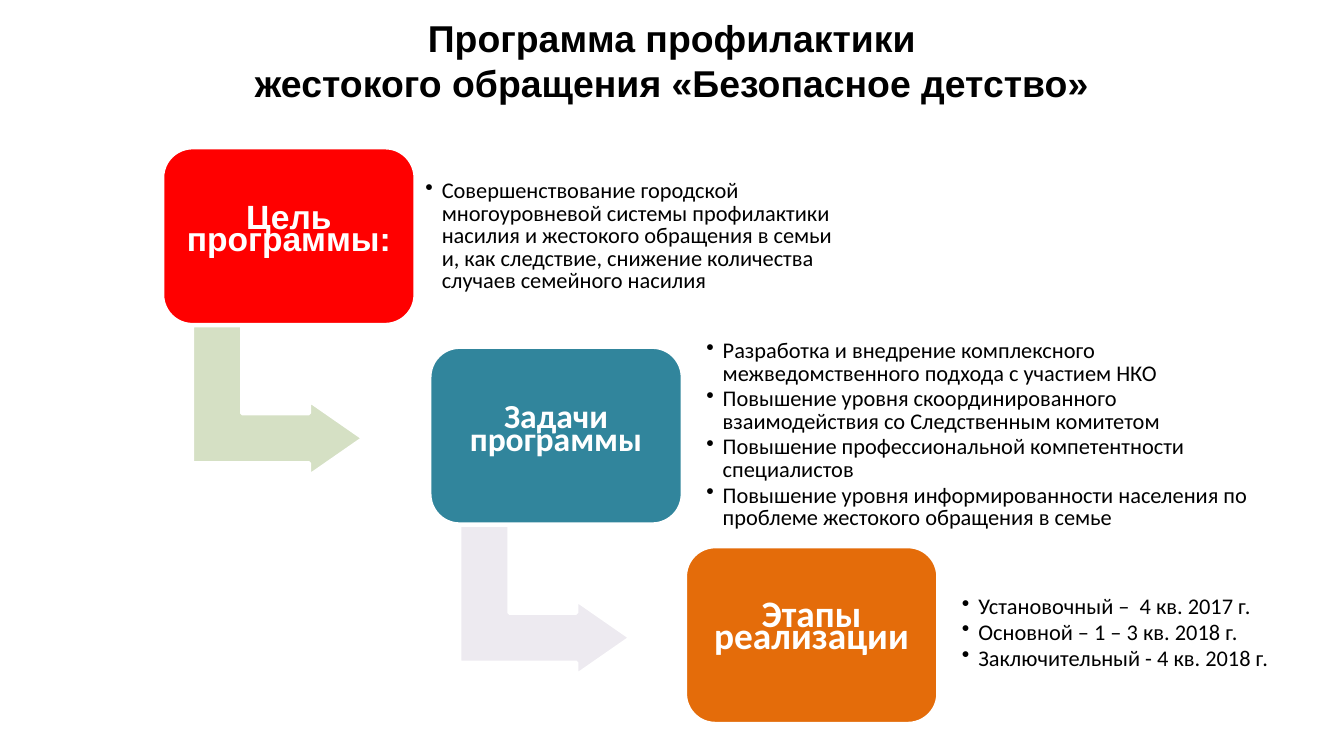
import pptx
import pptx.dml.color
import pptx.enum.shapes
import pptx.enum.text
import pptx.oxml
import pptx.oxml.ns
import pptx.util

Cm = pptx.util.Cm
Pt = pptx.util.Pt
RGBColor = pptx.dml.color.RGBColor
Shape = pptx.enum.shapes.MSO_SHAPE
Align = pptx.enum.text.PP_ALIGN
Anchor = pptx.enum.text.MSO_ANCHOR

WHITE = RGBColor(0xFF, 0xFF, 0xFF)
BLACK = RGBColor(0x00, 0x00, 0x00)
RED = RGBColor(0xFF, 0x00, 0x00)
TEAL = RGBColor(0x31, 0x85, 0x9C)
ORANGE = RGBColor(0xE4, 0x6C, 0x0A)
PALE_GREEN = RGBColor(0xD5, 0xE0, 0xC4)
PALE_LILAC = RGBColor(0xED, 0xEA, 0xF0)

BOX_WIDTH, BOX_HEIGHT = 4.78, 3.35
FIRST_TOP, STEP_DOWN = 2.79, 3.77
ARROW_WIDTH, ARROW_HEIGHT = 2.84, 3.23

STEPS = [
    {
        "left": 3.07, "fill": RED, "arrow": PALE_GREEN,
        "label": "Цель программы:", "font": "Arial", "size": 18,
        "frame": (7.92, 3.12, 7.98, 2.72),
        "points": [
            "Совершенствование городской многоуровневой системы профилактики "
            "насилия и жестокого обращения в семьи и, как следствие, снижение "
            "количества случаев семейного насилия",
        ],
    },
    {
        "left": 8.12, "fill": TEAL, "arrow": PALE_LILAC,
        "label": "Задачи программы", "font": "Calibri", "size": 18,
        "frame": (13.23, 6.63, 10.87, 3.2),
        "points": [
            "Разработка и внедрение комплексного межведомственного подхода с участием НКО",
            "Повышение уровня скоординированного взаимодействия со Следственным комитетом",
            "Повышение профессиональной компетентности специалистов",
            "Повышение уровня информированности населения по проблеме "
            "жестокого обращения в семье",
        ],
    },
    {
        "left": 12.95, "fill": ORANGE, "arrow": None,
        "label": "Этапы реализации", "font": "Calibri", "size": 20,
        "frame": (18.06, 10.62, 6.05, 2.72),
        "points": [
            "Установочный –  4 кв. 2017 г.",
            "Основной – 1 – 3 кв. 2018 г.",
            "Заключительный - 4 кв. 2018 г.",
        ],
    },
]


class StepSlide:
    def __init__(self, page):
        self.page = page

    def format_text(self, para, name, size, color, bold=False):
        for span in para.runs:
            span.font.name = name
            span.font.size = Pt(size)
            span.font.bold = bold
            span.font.color.rgb = color

    def prepare_frame(self, frame, margin):
        frame.word_wrap = True
        frame.vertical_anchor = Anchor.MIDDLE
        frame.margin_left = frame.margin_right = Cm(margin)
        frame.margin_top = frame.margin_bottom = Cm(margin)

    def title(self, text):
        box = self.page.shapes.title
        box.left, box.top, box.width, box.height = Cm(0), Cm(0.1), Cm(25.4), Cm(2.06)
        box.text_frame.text = text
        box.text_frame.vertical_anchor = Anchor.MIDDLE
        para = box.text_frame.paragraphs[0]
        para.alignment = Align.CENTER
        self.format_text(para, "Arial", 20, BLACK, True)

    def shape(self, kind, left, top, width, height, fill):
        shape = self.page.shapes.add_shape(kind, Cm(left), Cm(top), Cm(width), Cm(height))
        shape.shadow.inherit = False
        shape.fill.solid()
        shape.fill.fore_color.rgb = fill
        shape.line.color.rgb = WHITE
        shape.line.width = Pt(2)
        return shape

    def arrow(self, left, top, fill):
        arrow = self.shape(Shape.BENT_UP_ARROW, left, top, ARROW_WIDTH, ARROW_HEIGHT, fill)
        arrow.rotation = 90
        for index, value in enumerate((0.33, 0.25, 0.36)):
            arrow.adjustments[index] = value

    def step_box(self, left, top, fill, label, font, size):
        box = self.shape(Shape.ROUNDED_RECTANGLE, left, top, BOX_WIDTH, BOX_HEIGHT, fill)
        box.adjustments[0] = 0.17
        self.prepare_frame(box.text_frame, 0.18)
        box.text_frame.text = label
        para = box.text_frame.paragraphs[0]
        para.alignment = Align.CENTER
        para.line_spacing = Pt(12)
        para.space_after = Pt(size * 0.35)
        self.format_text(para, font, size, WHITE, True)

    def bullets(self, left, top, width, height, points):
        box = self.page.shapes.add_textbox(Cm(left), Cm(top), Cm(width), Cm(height))
        frame = box.text_frame
        self.prepare_frame(frame, 0.12)
        frame.text = "\n".join(points)
        for para in frame.paragraphs:
            properties = para._p.get_or_add_pPr()
            properties.set("marL", str(Cm(0.31)))
            properties.set("indent", str(-Cm(0.31)))
            bullet = pptx.oxml.parse_xml(
                f'<a:buChar {pptx.oxml.ns.nsdecls("a")} char="•"/>'
            )
            properties.append(bullet)
            para.line_spacing = Pt(12)
            para.space_after = Pt(1.8)
            self.format_text(para, "Calibri", 12, BLACK)


def main():
    deck = pptx.Presentation()
    deck.slide_width, deck.slide_height = Cm(25.4), Cm(14.29)
    slide = StepSlide(deck.slides.add_slide(deck.slide_layouts.get_by_name("Title Only")))
    slide.title("Программа профилактики\vжестокого обращения «Безопасное детство»")
    for index, step in enumerate(STEPS):
        top = FIRST_TOP + index * STEP_DOWN
        if step["arrow"] is not None:
            slide.arrow(step["left"] + 0.76, top + 3.17, step["arrow"])
        slide.step_box(
            step["left"], top, step["fill"], step["label"], step["font"], step["size"]
        )
        slide.bullets(*step["frame"], step["points"])
    deck.save("out.pptx")


if __name__ == "__main__":
    main()
